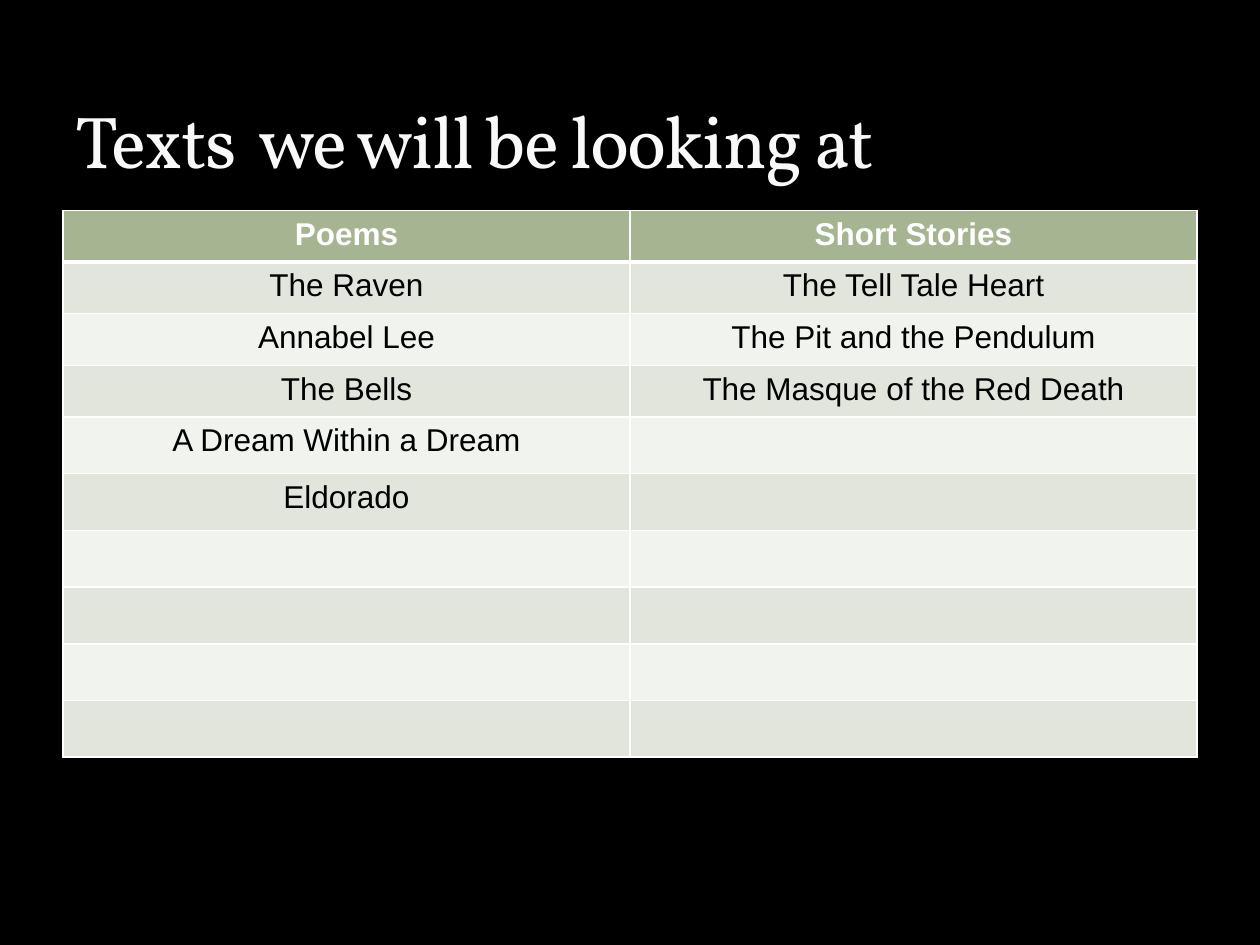
import pptx
import pptx.dml.color
import pptx.enum.text
import pptx.oxml
import pptx.oxml.ns
import pptx.util
from pptx.util import Inches

COLORS = {
    "background": "000000",
    "title": "F9F9F9",
    "title_outline": "3C4422",
    "header": "A5B592",
    "header_text": "FFFFFF",
    "odd_row": "E1E5DC",
    "even_row": "F0F3EE",
    "body_text": "000000",
    "border": "FFFFFF",
}

POEMS = ["The Raven", "Annabel Lee", "The Bells", "A Dream Within a Dream", "Eldorado"]
STORIES = ["The Tell Tale Heart", "The Pit and the Pendulum", "The Masque of the Red Death"]
COLUMNS = [["Poems"] + POEMS, ["Short Stories"] + STORIES]
ROW_HEIGHTS = [0.41] * 4 + [0.45] * 6
COLUMN_WIDTH = 4.5

TITLE_FORMAT = {"name": "Vollkorn", "size": pptx.util.Pt(42), "bold": False}
HEADER_FORMAT = {"name": "Arial", "size": pptx.util.Pt(18), "bold": True}
BODY_FORMAT = {**HEADER_FORMAT, "bold": False}


def rgb(name):
    return pptx.dml.color.RGBColor.from_string(COLORS[name])


def add_run(paragraph, text, font_format, color):
    run = paragraph.add_run()
    run.text = text
    for attribute, value in font_format.items():
        setattr(run.font, attribute, value)
    run.font.color.rgb = rgb(color)
    return run


def line_element(tag, points, color, alpha=100):
    width = pptx.util.Pt(points)
    return pptx.oxml.parse_xml(
        f'<a:{tag} {pptx.oxml.ns.nsdecls("a")} w="{int(width)}"><a:solidFill>'
        f'<a:srgbClr val="{COLORS[color]}"><a:alpha val="{alpha * 1000}"/></a:srgbClr>'
        f'</a:solidFill><a:prstDash val="solid"/></a:{tag}>'
    )


def add_title(slide, text):
    title = slide.shapes.add_textbox(Inches(0.5), Inches(0.17), Inches(9), Inches(1.33))
    frame = title.text_frame
    frame.word_wrap = True
    frame.vertical_anchor = pptx.enum.text.MSO_ANCHOR.BOTTOM
    run = add_run(frame.paragraphs[0], text, TITLE_FORMAT, "title")
    # Tight letter spacing and a faint outline
    properties = run.font._element
    properties.set("spc", "-100")
    properties.insert(0, line_element("ln", 0.25, "title_outline", 25))


def fill_cell(cell, text, row):
    is_header = row == 0
    # Borders come before the fill in the cell properties
    properties = cell._tc.get_or_add_tcPr()
    widths = {"lnL": 1, "lnR": 1, "lnT": 3 if row == 1 else 1, "lnB": 3 if is_header else 1}
    for tag, points in widths.items():
        properties.append(line_element(tag, points, "border"))
    cell.fill.solid()
    cell.fill.fore_color.rgb = rgb("header" if is_header else "odd_row" if row % 2 else "even_row")
    if text:
        paragraph = cell.text_frame.paragraphs[0]
        paragraph.alignment = pptx.enum.text.PP_ALIGN.CENTER
        font_format = HEADER_FORMAT if is_header else BODY_FORMAT
        add_run(paragraph, text, font_format, "header_text" if is_header else "body_text")


def add_text_table(slide):
    table = slide.shapes.add_table(
        len(ROW_HEIGHTS), len(COLUMNS), Inches(0.5), Inches(1.67),
        Inches(COLUMN_WIDTH * len(COLUMNS)), Inches(sum(ROW_HEIGHTS)),
    ).table
    for row, height in enumerate(ROW_HEIGHTS):
        table.rows[row].height = Inches(height)
    for column, texts in enumerate(COLUMNS):
        table.columns[column].width = Inches(COLUMN_WIDTH)
        for row in range(len(ROW_HEIGHTS)):
            fill_cell(table.cell(row, column), texts[row] if row < len(texts) else "", row)


def main():
    presentation = pptx.Presentation()
    presentation.slide_width = Inches(10)
    presentation.slide_height = Inches(7.5)
    slide = presentation.slides.add_slide(presentation.slide_layouts[6])

    # Background
    slide.background.fill.solid()
    slide.background.fill.fore_color.rgb = rgb("background")

    # Title and reading list
    add_title(slide, "Texts  we will be looking at")
    add_text_table(slide)

    presentation.save("out.pptx")


if __name__ == "__main__":
    main()
